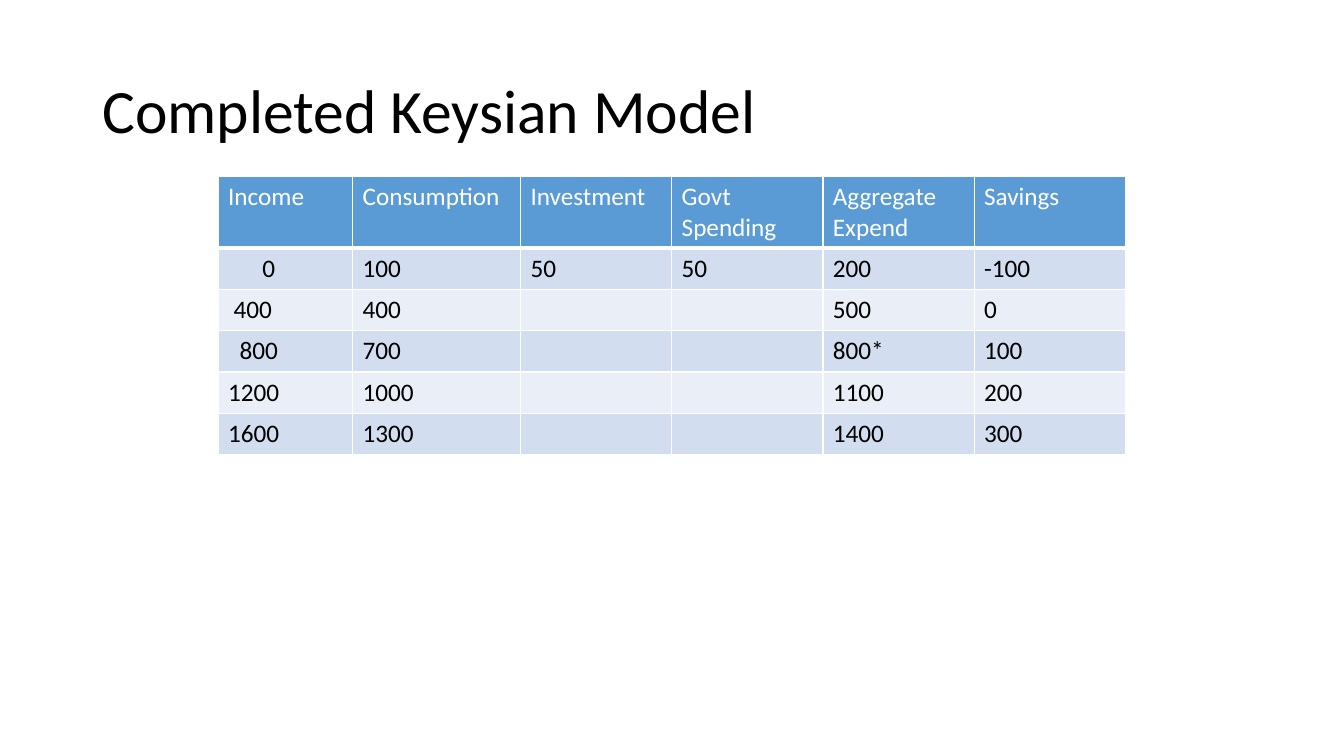
from dataclasses import dataclass

from lxml.etree import SubElement
from pptx import Presentation
from pptx.dml.color import RGBColor
from pptx.enum.text import MSO_ANCHOR as Anchor, PP_ALIGN as Align
from pptx.oxml.ns import qn
from pptx.util import Cm, Pt

WHITE, BLACK = "FFFFFF", "000000"
HEADER_FILL = "5B9BD5"
BAND_FILLS = ("D2DEEF", "EAEFF7")
ROW_HEIGHT = 1.04
CELL_MARGIN = 0.25
HEADER_BORDERS = {"lnL": 1, "lnR": 1, "lnT": 1, "lnB": 3}


@dataclass
class Column:
    heading: str
    width: float
    values: tuple[str, ...]
    indents: tuple[float, ...] = (0, 0, 0, 0, 0)


COLUMNS = [
    Column("Income", 3.39, ("0", "400", "800", "1200", "1600"), (0.86, 0.14, 0.29, 0, 0)),
    Column("Consumption", 4.23, ("100", "400", "700", "1000", "1300")),
    Column("Investment", 3.81, ("50", "", "", "", "")),
    Column("Govt Spending", 3.81, ("50", "", "", "", "")),
    Column("Aggregate Expend", 3.81, ("200", "500", "800*", "1100", "1400")),
    Column("Savings", 3.81, ("-100", "0", "100", "200", "300")),
]


def color(value: str) -> RGBColor:
    return RGBColor.from_string(value)


def apply(target, settings: dict) -> None:
    for name, value in settings.items():
        setattr(target, name, value)


def format_font(font, size: float, text_color: str) -> None:
    apply(font, {"name": "Calibri", "size": Pt(size), "bold": False})
    font.color.rgb = color(text_color)


def add_borders(cell) -> None:
    properties = cell._tc.get_or_add_tcPr()
    for side, width in HEADER_BORDERS.items():
        line = SubElement(properties, qn(f"a:{side}"), w=str(Pt(width)))
        fill = SubElement(line, qn("a:solidFill"))
        SubElement(fill, qn("a:srgbClr"), val=WHITE)


def fill_cell(cell, text: str, fill: str, text_color: str, indent: float = 0) -> None:
    cell.margin_left = Cm(CELL_MARGIN + indent)
    cell.fill.solid()
    cell.fill.fore_color.rgb = color(fill)
    cell.text = text
    para = cell.text_frame.paragraphs[0]
    format_font(para.font, 18, text_color)
    for span in para.runs:
        format_font(span.font, 18, text_color)


def add_title(page, text: str) -> None:
    box = page.shapes.title
    apply(box, {"left": Cm(2.33), "top": Cm(1.01), "width": Cm(29.21), "height": Cm(3.68)})
    box.text_frame.text = text
    box.text_frame.vertical_anchor = Anchor.MIDDLE
    para = box.text_frame.paragraphs[0]
    apply(para, {"alignment": Align.LEFT, "line_spacing": 0.9})
    format_font(para.runs[0].font, 44, BLACK)


def add_model_table(page, columns: list[Column]) -> None:
    row_count = len(columns[0].values) + 1
    width = sum(column.width for column in columns)
    frame = page.shapes.add_table(
        row_count, len(columns), Cm(5.5), Cm(4.45), Cm(width), Cm(ROW_HEIGHT * row_count)
    )
    table = frame.table
    for row in table.rows:
        row.height = Cm(ROW_HEIGHT)
    for index, column in enumerate(columns):
        table.columns[index].width = Cm(column.width)
        header = table.cell(0, index)
        add_borders(header)
        fill_cell(header, column.heading, HEADER_FILL, WHITE)
        for row, (value, indent) in enumerate(zip(column.values, column.indents)):
            band = BAND_FILLS[row % len(BAND_FILLS)]
            fill_cell(table.cell(row + 1, index), value, band, BLACK, indent)


def main() -> None:
    deck = Presentation()
    apply(deck, {"slide_width": Cm(33.87), "slide_height": Cm(19.05)})
    page = deck.slides.add_slide(deck.slide_layouts[5])
    add_title(page, "Completed Keysian Model")
    add_model_table(page, COLUMNS)
    deck.save("out.pptx")


if __name__ == "__main__":
    main()
